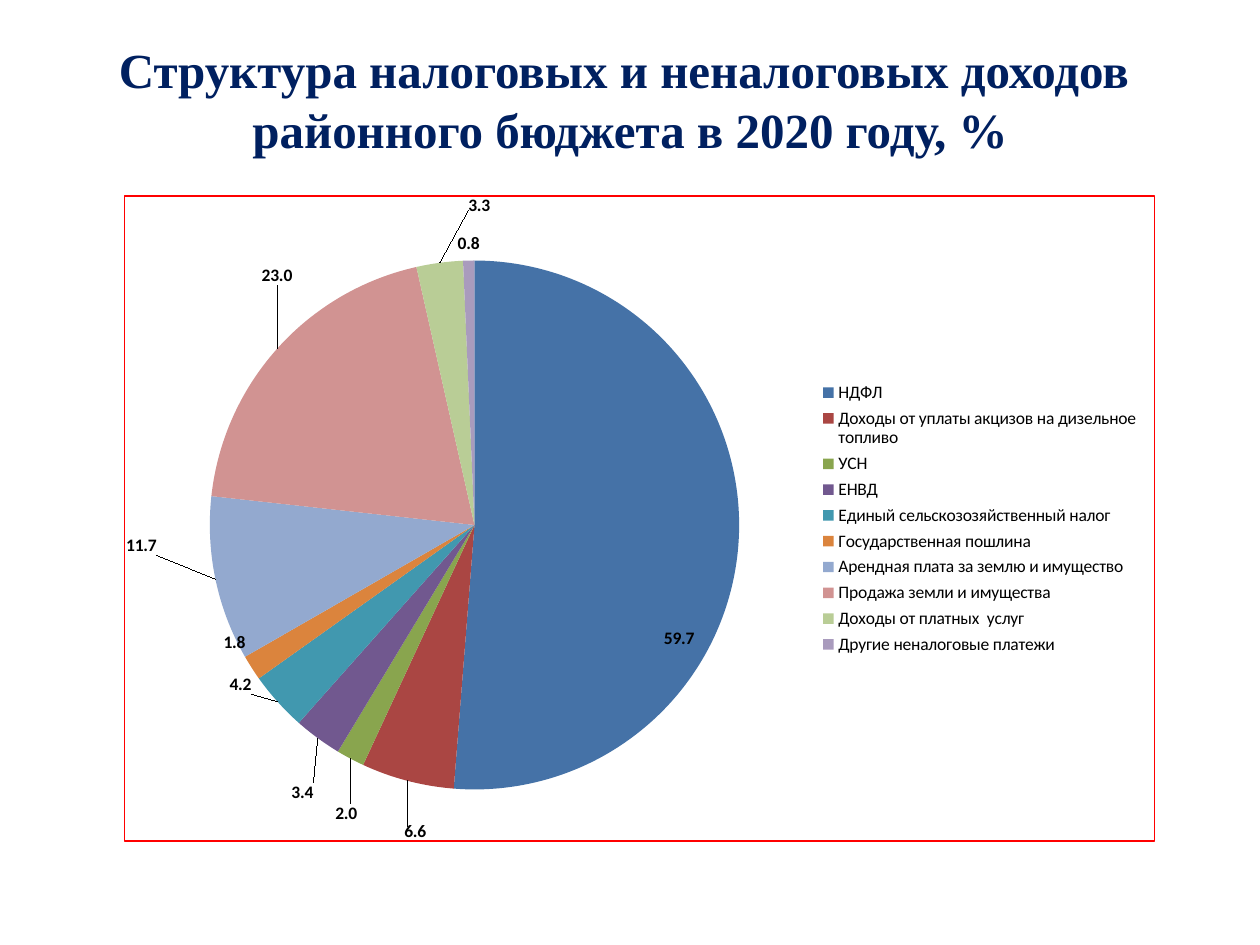
from typing import NamedTuple

from pptx import Presentation
from pptx.chart.data import CategoryChartData
from pptx.dml.color import RGBColor
from pptx.enum.chart import XL_CHART_TYPE, XL_LABEL_POSITION, XL_LEGEND_POSITION
from pptx.enum.text import MSO_ANCHOR, PP_ALIGN
from pptx.oxml import parse_xml
from pptx.oxml.ns import nsdecls, qn
from pptx.util import Cm, Pt

PIE = XL_CHART_TYPE.PIE
OUTER = XL_LABEL_POSITION.OUTSIDE_END
RIGHT = XL_LEGEND_POSITION.RIGHT
MIDDLE = MSO_ANCHOR.MIDDLE
CENTER = PP_ALIGN.CENTER


class Slice(NamedTuple):
    name: str
    value: float
    color: str
    shift: tuple[float, float] | None


SLICES = [
    Slice("НДФЛ", 59.7, "4572A7", (-0.08, 0.16)),
    Slice("Доходы от уплаты акцизов на дизельное топливо", 6.6, "AA4643", (0.02, 0.06)),
    Slice("УСН", 2.0, "89A54E", (0.01, 0.06)),
    Slice("ЕНВД", 3.4, "71588F", (0, 0.06)),
    Slice("Единый сельскозозяйственный налог", 4.2, "4198AF", (-0.02, -0.05)),
    Slice("Государственная пошлина", 1.8, "DB843D", (0, -0.06)),
    Slice("Арендная плата за землю и имущество", 11.7, "93A9CF", (-0.05, -0.07)),
    Slice("Продажа земли и имущества", 23.0, "D19392", (0.02, -0.09)),
    Slice("Доходы от платных  услуг", 3.3, "B9CD96", (0.05, -0.07)),
    Slice("Другие неналоговые платежи", 0.8, "A99BBD", None),
]
TITLE = [
    "Структура налоговых и неналоговых доходов ",
    "районного бюджета в 2020 году, %",
]


def paint(code: str) -> RGBColor:
    return RGBColor.from_string(code)


def layout(x: float, y: float, size: tuple[float, float] | None = None, inner: bool = False):
    tags = [("layoutTarget", "inner")] if inner else []
    if size:
        tags += [("xMode", "edge"), ("yMode", "edge")]
    tags += [("x", x), ("y", y)]
    if size:
        tags += [("w", size[0]), ("h", size[1])]
    body = "".join(f'<c:{tag} val="{val}"/>' for tag, val in tags)
    return parse_xml(
        f'<c:layout {nsdecls("c")}><c:manualLayout>{body}</c:manualLayout></c:layout>'
    )


def place(node, spot, after: str | None = None) -> None:
    for old in node.findall(qn("c:layout")):
        node.remove(old)
    if after:
        node.find(qn(after)).addnext(spot)
    else:
        node.insert(0, spot)


def add_title(slide, lines: list[str]) -> None:
    box = slide.shapes.add_textbox(Cm(0), Cm(0.08), Cm(25.4), Cm(3.81))
    frame = box.text_frame
    frame.word_wrap = True
    frame.vertical_anchor = MIDDLE
    frame.text = "\n".join(lines)
    for para in frame.paragraphs:
        para.alignment = CENTER
        para.line_spacing = Pt(34)
        font = para.font
        font.name = "Times New Roman"
        font.size = Pt(28)
        font.bold = True
        font.color.rgb = paint("002060")


def style_font(font, bold: bool = False) -> None:
    font.name = "Calibri"
    font.size = Pt(10)
    font.bold = bold
    font.color.rgb = paint("000000")


def add_pie(slide, slices: list[Slice]) -> None:
    data = CategoryChartData(number_format="0.0")
    data.categories = [part.name for part in slices]
    data.add_series("Series 1", [part.value for part in slices])
    chart = slide.shapes.add_chart(
        PIE, Cm(2.49), Cm(3.94), Cm(20.8), Cm(13.03), data
    ).chart
    chart.has_title = False
    style_font(chart.font)
    chart.has_legend = True
    legend = chart.legend
    legend.position = RIGHT
    legend.include_in_layout = False
    style_font(legend.font)

    plot = chart.plots[0]
    plot.vary_by_categories = True
    series = plot.series[0]
    labels = series.data_labels
    labels.show_value = True
    labels.number_format = "0.0"
    labels.number_format_is_linked = False
    labels.position = OUTER
    style_font(labels.font, True)
    for i, part in enumerate(slices):
        point = series.points[i]
        fill = point.format.fill
        fill.solid()
        fill.fore_color.rgb = paint(part.color)
        if part.shift:
            label = point.data_label
            style_font(label.font, True)
            label.position = OUTER

    root = chart.element if hasattr(chart, "element") else chart._chartSpace
    for node in root.iter(qn("c:dLbl")):
        shift = slices[int(node.find(qn("c:idx")).get("val"))].shift
        place(node, layout(*shift), "c:idx")
    body = root.find(qn("c:chart"))
    place(body.find(qn("c:plotArea")), layout(0.08, 0.1, (0.52, 0.82), True))
    place(body.find(qn("c:legend")), layout(0.67, 0.28, (0.32, 0.44)), "c:legendPos")
    body.addnext(parse_xml(
        f'<c:spPr {nsdecls("c", "a")}><a:noFill/><a:ln w="{Pt(0.75)}"><a:solidFill>'
        '<a:srgbClr val="FF0000"/></a:solidFill></a:ln></c:spPr>'
    ))


def main() -> None:
    deck = Presentation()
    deck.slide_width, deck.slide_height = Cm(25.4), Cm(19.05)
    slide = deck.slides.add_slide(deck.slide_layouts[6])
    add_title(slide, TITLE)
    add_pie(slide, SLICES)
    deck.save("out.pptx")


if __name__ == "__main__":
    main()
